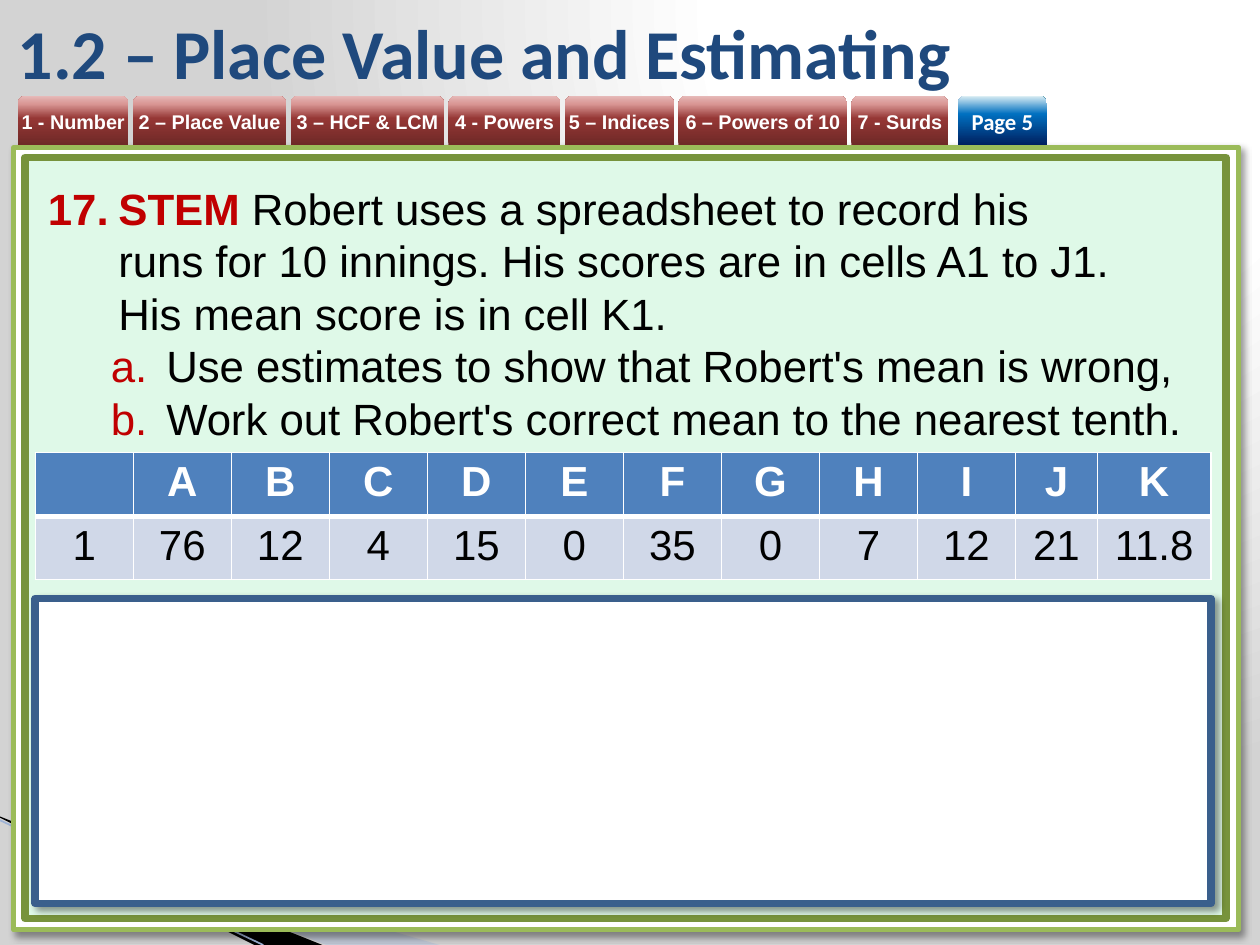
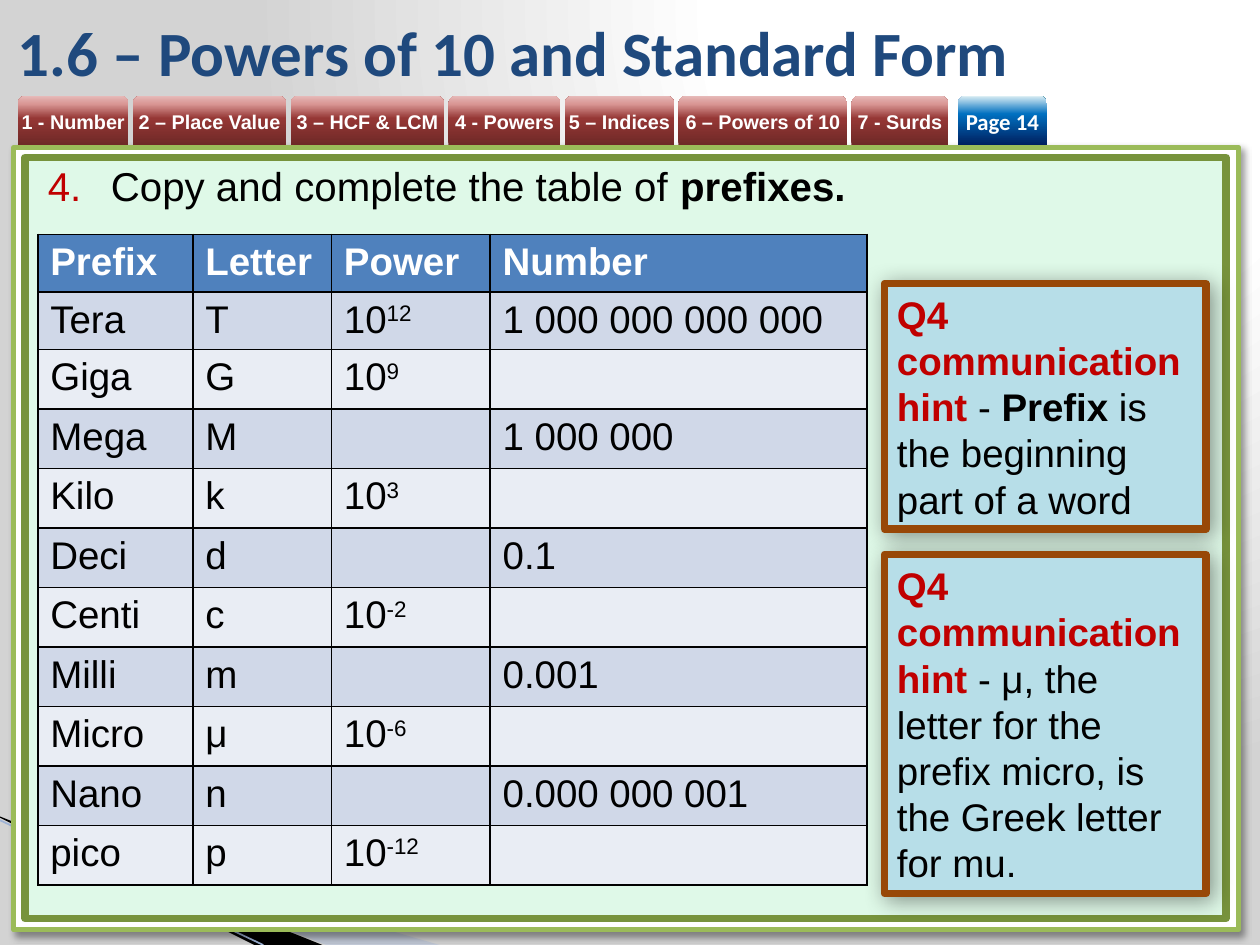
from dataclasses import dataclass
from typing import NamedTuple, Optional

from lxml.etree import SubElement
from pptx import Presentation
from pptx.dml.color import RGBColor
from pptx.enum.shapes import MSO_CONNECTOR, MSO_SHAPE
from pptx.enum.text import MSO_ANCHOR, MSO_AUTO_SIZE, PP_ALIGN
from pptx.oxml.ns import qn
from pptx.util import Emu, Inches, Pt

COLUMNS, ROWS = 100, 75
WIDTH, HEIGHT = Inches(10), Inches(7.5)


# Theme and records
@dataclass(frozen=True)
class Theme:
    body_font: str = "Arial"
    title_font: str = "Calibri"
    title: str = "1F497D"
    red: str = "C00000"
    black: str = "000000"
    white: str = "FFFFFF"
    outer_edge: str = "9BBB59"
    panel: str = "DFF9E8"
    panel_edge: str = "77933C"
    answer_edge: str = "3A5F8C"
    hint: str = "B7DEE8"
    hint_edge: str = "984807"
    header: str = "4F81BD"
    bands: tuple = ("D0D8E8", "E9EDF4")
    stripe: str = "A7B9DB"
    stripe_line: str = "9EB3D6"
    page_stops: tuple = ((0, "FFFFFF"), (40, "FFFFFF"), (100, "D3D3D3"))
    tab_stops: tuple = ((0, "6F2927"), (54, "953735"), (83, "D99694"), (100, "E6B9B8"))
    number_stops: tuple = ((0, "002060"), (63, "0070C0"), (100, "DBEEF4"))
    tab_size: float = 11.3
    number_size: float = 13
    hint_size: float = 22
    heavy_line: float = 4.33
    line_height: float = 1.2


THEME = Theme()


class Box(NamedTuple):
    """A place on the grid of 100 columns and 75 rows."""
    left: float
    top: float
    width: float
    height: float

    def emu(self) -> tuple:
        return across(self.left), down(self.top), across(self.width), down(self.height)


class Span(NamedTuple):
    text: str
    bold: bool = False
    colour: str = THEME.black


class Item(NamedTuple):
    spans: list
    hanging: float
    indent: float
    numbering: str = "arabicPeriod"
    start: int = 1
    level: int = 0


class Tab(NamedTuple):
    label: str
    width: float


class TableStyle(NamedTuple):
    size: float
    align: PP_ALIGN
    edge: str
    header_rule: float


TABS = [Tab("1 - Number", 8.8), Tab("2 – Place Value", 12.2), Tab("3 – HCF & LCM", 12.2),
        Tab("4 - Powers", 8.9), Tab("5 – Indices", 8.7), Tab("6 – Powers of 10", 13.4),
        Tab("7 - Surds", 7.7)]
TAB_LEFT, TAB_TOP, TAB_GAP, TAB_HEIGHT = 1.4, 7.6, 0.33, 3.9
TITLE_BOX = Box(0.4, 0.5, 82.7, 7.1)
NUMBER_BOX = Box(76, TAB_TOP, 7.1, TAB_HEIGHT)


def across(columns: float) -> Emu:
    return Emu(round(WIDTH * columns / COLUMNS))


def down(rows: float) -> Emu:
    return Emu(round(HEIGHT * rows / ROWS))


# Fills, shadows and text
def add_colour(parent, colour: str, alpha: Optional[int] = None) -> None:
    tint = SubElement(parent, qn("a:srgbClr"), val=colour)
    if alpha is not None:
        SubElement(tint, qn("a:alpha"), val=str(alpha * 1000))


def paint_gradient(element, fill, stops: tuple, circular: bool = False) -> None:
    fill.gradient()
    gradient = next(element.iter(qn("a:gradFill")))
    for child in list(gradient):
        gradient.remove(child)
    stop_list = SubElement(gradient, qn("a:gsLst"))
    for position, colour in stops:
        add_colour(SubElement(stop_list, qn("a:gs"), pos=str(position * 1000)), colour)
    if circular:
        shade = SubElement(gradient, qn("a:path"), attrib={"path": "circle"})
        SubElement(shade, qn("a:fillToRect"), l="65000", b="98000")
    else:
        SubElement(gradient, qn("a:lin"), ang="16200000", scaled="0")


def add_shadow(shape, blur: float) -> None:
    effects = shape.element.spPr.find(qn("a:effectLst"))
    shadow = SubElement(effects, qn("a:outerShdw"), blurRad=str(Pt(blur)), dist=str(Pt(3)),
                        dir="2700000", algn="tl", rotWithShape="0")
    add_colour(shadow, THEME.black, 40)


def format_run(run, size: float, colour: str, bold: bool, font: str = THEME.body_font) -> None:
    run.font.size, run.font.bold, run.font.name = Pt(size), bold, font
    run.font.color.rgb = RGBColor.from_string(colour)


def write_spans(para, spans: list, size: float) -> None:
    para.space_before = Pt(0)
    para.line_spacing = Pt(size * THEME.line_height)
    for span in spans:
        for number, line in enumerate(span.text.split("\n")):
            if number:
                para.add_line_break()
            run = para.add_run()
            run.text = line
            format_run(run, size, span.colour, span.bold)


def add_panel(page, box: Box, fill: str, edge: str, weight: float, blur: float = 0):
    panel = page.shapes.add_shape(MSO_SHAPE.RECTANGLE, *box.emu())
    panel.shadow.inherit = False
    panel.fill.solid()
    panel.fill.fore_color.rgb = RGBColor.from_string(fill)
    panel.line.color.rgb = RGBColor.from_string(edge)
    panel.line.width = Pt(weight)
    if blur:
        add_shadow(panel, blur)
    return panel


def add_tab(page, box: Box, label: str, stops: tuple, size: float, font: str) -> None:
    tab = page.shapes.add_shape(MSO_SHAPE.ROUND_2_SAME_RECTANGLE, *box.emu())
    tab.shadow.inherit = False
    paint_gradient(tab.element, tab.fill, stops)
    tab.line.fill.background()
    frame = tab.text_frame
    frame.margin_left = frame.margin_right = frame.margin_top = frame.margin_bottom = 0
    frame.vertical_anchor = MSO_ANCHOR.MIDDLE
    frame.text = label
    frame.paragraphs[0].alignment = PP_ALIGN.CENTER
    format_run(frame.paragraphs[0].runs[0], size, THEME.white, True, font)


# Shared frame, kept on the layout
def add_stripe(page, points: list, colour: str, alpha: Optional[int] = None) -> None:
    corners = [(across(x), down(y)) for x, y in points]
    builder = page.shapes.build_freeform(*corners[0])
    builder.add_line_segments(corners[1:])
    stripe = builder.convert_to_shape()
    stripe.shadow.inherit = False
    stripe.fill.solid()
    stripe.fill.fore_color.rgb = RGBColor.from_string(colour)
    stripe.line.fill.background()
    if alpha is not None:
        tint = next(stripe.element.spPr.iter(qn("a:srgbClr")))
        SubElement(tint, qn("a:alpha"), val=str(alpha * 1000))


def build_layout(page) -> None:
    layout = page.slide_layout
    paint_gradient(layout.element, layout.background.fill, THEME.page_stops, circular=True)
    add_stripe(page, [(0, 64.9), (34.9, 75), (25.9, 75)], THEME.stripe, 40)
    add_stripe(page, [(0, 64.8), (25.6, 75), (20.2, 75), (0, 64.9)], THEME.black)
    edge = page.shapes.add_connector(MSO_CONNECTOR.STRAIGHT, across(0), down(65.1),
                                     across(20.9), down(75))
    edge.line.color.rgb = RGBColor.from_string(THEME.stripe_line)
    edge.line.width = Pt(0.95)
    SubElement(edge.element.spPr, qn("a:effectLst"))
    add_panel(page, Box(1.1, 11.7, 97.2, 62.1), THEME.white, THEME.outer_edge, 3, blur=4)
    add_panel(page, Box(2, 12.5, 95.3, 60.4), THEME.panel, THEME.panel_edge, THEME.heavy_line)
    left = TAB_LEFT
    for tab in TABS:
        add_tab(page, Box(left, TAB_TOP, tab.width, TAB_HEIGHT), tab.label,
                THEME.tab_stops, THEME.tab_size, THEME.body_font)
        left += tab.width + TAB_GAP
    drawn = [shape for shape in page.shapes if not shape.is_placeholder]
    for number, shape in enumerate(drawn, start=20):
        next(shape.element.iter(qn("p:cNvPr"))).set("id", str(number))
        layout.shapes.element.append(shape.element)


# Parts of a page
def place(shape, box: Box) -> None:
    shape.left, shape.top, shape.width, shape.height = box.emu()
    shape.text_frame.auto_size = MSO_AUTO_SIZE.NONE


def add_heading(page, text: str, size: float, number: int) -> None:
    title = page.shapes.title
    place(title, TITLE_BOX)
    title.text_frame.text = text
    title.text_frame.vertical_anchor = MSO_ANCHOR.MIDDLE
    title.text_frame.paragraphs[0].alignment = PP_ALIGN.LEFT
    format_run(title.text_frame.paragraphs[0].runs[0], size, THEME.title, True, THEME.title_font)
    add_tab(page, NUMBER_BOX, f"Page {number}", THEME.number_stops,
            THEME.number_size, THEME.title_font)


def fill_question(page, box: Box, items: list, size: float) -> None:
    body = page.placeholders[1]
    place(body, box)
    frame = body.text_frame
    for number, item in enumerate(items):
        para = frame.add_paragraph() if number else frame.paragraphs[0]
        para.level = item.level
        properties = para._p.get_or_add_pPr()
        properties.set("marL", str(Inches(item.indent)))
        properties.set("indent", str(-Inches(item.hanging)))
        add_colour(SubElement(properties, qn("a:buClr")), THEME.red)
        SubElement(properties, qn("a:buAutoNum"), type=item.numbering, startAt=str(item.start))
        write_spans(para, item.spans, size)


def add_hint(page, box: Box, spans: list) -> None:
    hint = add_panel(page, box, THEME.hint, THEME.hint_edge, THEME.heavy_line, blur=13)
    frame = hint.text_frame
    frame.word_wrap = True
    frame.margin_right = Inches(0.15)
    frame.vertical_anchor = MSO_ANCHOR.MIDDLE
    frame.paragraphs[0].alignment = PP_ALIGN.LEFT
    lead = Span("Q4 communication hint ", True, THEME.red)
    write_spans(frame.paragraphs[0], [lead, *spans], THEME.hint_size)


def add_grid(page, box: Box, widths: list, rows: list, style: TableStyle) -> None:
    table = page.shapes.add_table(len(rows), len(widths), *box.emu()).table
    for column, width in zip(table.columns, widths):
        column.width = across(width)
    for row_number, values in enumerate(rows):
        header = row_number == 0
        table.rows[row_number].height = down(box.height / len(rows))
        fill = THEME.header if header else THEME.bands[(row_number - 1) % 2]
        for column_number, value in enumerate(values):
            cell = table.cell(row_number, column_number)
            for side in ("lnL", "lnR", "lnT", "lnB"):
                heavy = (header and side == "lnB") or (row_number == 1 and side == "lnT")
                edge = SubElement(cell._tc.get_or_add_tcPr(), qn(f"a:{side}"),
                                  w=str(Pt(style.header_rule if heavy else 1)))
                add_colour(SubElement(edge, qn("a:solidFill")), style.edge)
            cell.fill.solid()
            cell.fill.fore_color.rgb = RGBColor.from_string(fill)
            para = cell.text_frame.paragraphs[0]
            para.alignment = style.align
            para.font.size = Pt(style.size)
            # A caret in a value marks the start of its exponent
            for power, text in enumerate(value.split("^") if value else []):
                run = para.add_run()
                run.text = text
                format_run(run, style.size, THEME.white if header else THEME.black, header)
                if power:
                    run._r.get_or_add_rPr().set("baseline", "30000")


# Pages
def build_place_value(page) -> None:
    add_heading(page, "1.2 – Place Value and Estimating", 40, 5)
    story = (" Robert uses a spreadsheet to record his\n"
             "runs for 10 innings. His scores are in cells A1 to J1.\n"
             "His mean score is in cell K1.")
    parts = ["Use estimates to show that Robert's mean is wrong,",
             "Work out Robert's correct mean to the nearest tenth."]
    items = [Item([Span("STEM", True, THEME.red), Span(story)], 0.56, 0.56, start=17)]
    items += [Item([Span(part)], 0.44, 0.94, "alphaLcPeriod", level=1) for part in parts]
    fill_question(page, Box(2.8, 13.9, 93.3, 22), items, 25)
    add_panel(page, Box(2.8, 47.5, 93.3, 24.2), THEME.white, THEME.answer_edge,
              THEME.heavy_line, blur=4)
    scores = ["1", "76", "12", "4", "15", "0", "35", "0", "7", "12", "21", "11.8"]
    add_grid(page, Box(2.8, 35.9, 93.3, 10), [7.78] * 10 + [6.5, 9], [["", *"ABCDEFGHIJK"], scores],
             TableStyle(24, PP_ALIGN.CENTER, THEME.white, 3))


def build_prefixes(page) -> None:
    add_heading(page, "1.6 – Powers of 10 and Standard Form", 36, 14)
    prompt = [Span("Copy and complete the table of "), Span("prefixes.", True)]
    fill_question(page, Box(2.8, 12.3, 66.1, 4.9), [Item(prompt, 0.5, 0.5, start=4)], 23)
    prefixes = [["Prefix", "Letter", "Power", "Number"],
                ["Tera", "T", "10^12", "1 000 000 000 000"], ["Giga", "G", "10^9", ""],
                ["Mega", "M", "", "1 000 000"], ["Kilo", "k", "10^3", ""],
                ["Deci", "d", "", "0.1"], ["Centi", "c", "10^-2", ""],
                ["Milli", "m", "", "0.001"], ["Micro", "μ", "10^-6", ""],
                ["Nano", "n", "", "0.000 000 001"], ["pico", "p", "10^-12", ""]]
    add_grid(page, Box(3, 18.6, 65.8, 50.3), [12.3, 11, 12.6, 29.9], prefixes,
             TableStyle(22, PP_ALIGN.LEFT, THEME.black, 1))
    add_hint(page, Box(70.2, 22.5, 25.5, 19.5),
             [Span("- "), Span("Prefix ", True), Span("is the beginning part of a word")])
    add_hint(page, Box(70.2, 44, 25.5, 26.9),
             [Span("- μ, the letter for the prefix micro, is the Greek letter for mu.")])


def main() -> None:
    deck = Presentation()
    deck.slide_width, deck.slide_height = WIDTH, HEIGHT
    layout = deck.slide_layouts[1]
    first, second = deck.slides.add_slide(layout), deck.slides.add_slide(layout)
    build_layout(first)
    build_place_value(first)
    build_prefixes(second)
    deck.save("out.pptx")


if __name__ == "__main__":
    main()
